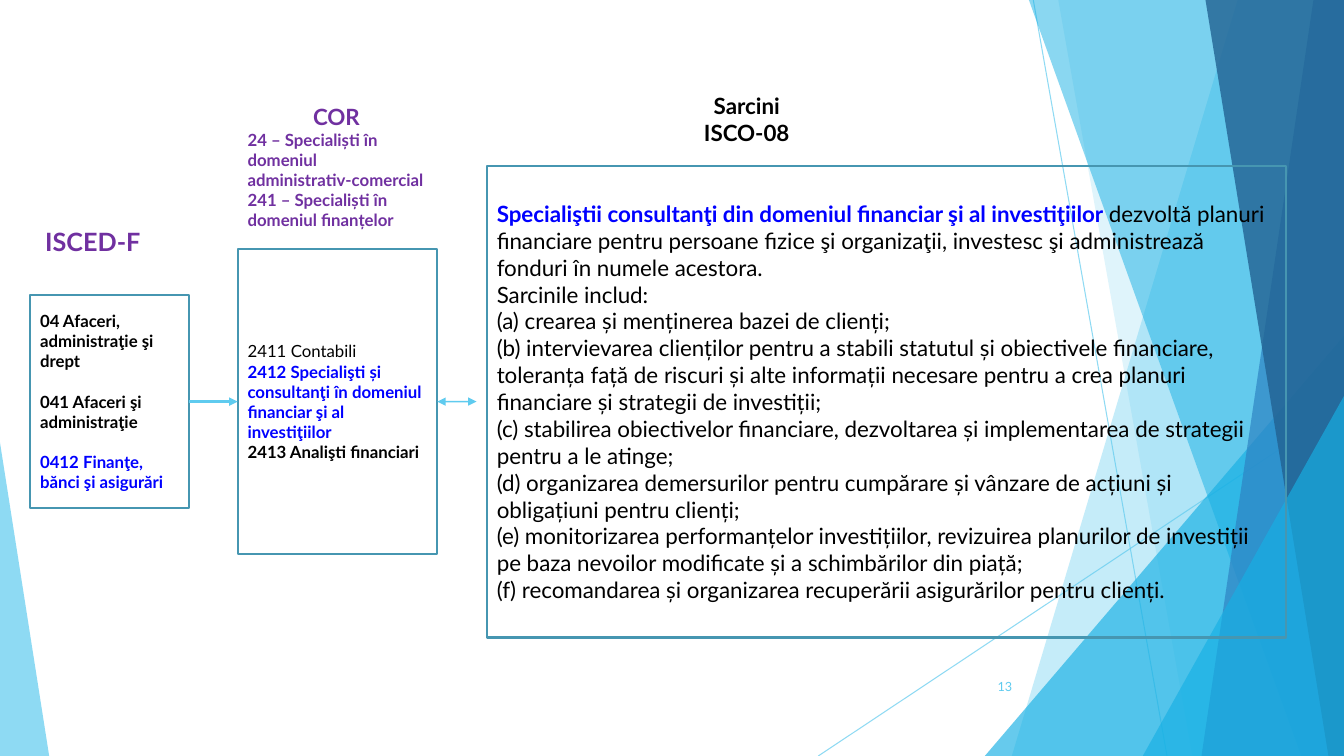
import pptx
import pptx.util
import pptx.dml.color
import pptx.enum.shapes
import pptx.enum.text
import pptx.oxml
import pptx.oxml.ns

Cm, Pt = pptx.util.Cm, pptx.util.Pt
RGB = pptx.dml.color.RGBColor
SHAPE = pptx.enum.shapes.MSO_SHAPE
ALIGN = pptx.enum.text.PP_ALIGN
MIDDLE = pptx.enum.text.MSO_ANCHOR.MIDDLE

SKY = RGB(0x5F, 0xCB, 0xEF)
CYAN = RGB(0x17, 0xB0, 0xE4)
AZURE = RGB(0x2E, 0x83, 0xC3)
NAVY = RGB(0x22, 0x62, 0x92)
TEAL = RGB(0x46, 0x96, 0xB1)
BLUE = RGB(0x00, 0x00, 0xFF)
PURPLE = RGB(0x70, 0x30, 0xA0)
BLACK = RGB(0x00, 0x00, 0x00)
WHITE = RGB(0xFF, 0xFF, 0xFF)

WIDE, HIGH = 33.87, 19.05
AXIS = 10.12


def add_tag(parent, name, **attrs):
    tag = pptx.oxml.parse_xml(f'<a:{name} {pptx.oxml.ns.nsdecls("a")}/>')
    for key, value in attrs.items():
        tag.set(key, str(value))
    parent.append(tag)


def fade(fill, percent):
    color = fill._xPr.find(".//" + pptx.oxml.ns.qn("a:srgbClr"))
    add_tag(color, "alpha", val=percent * 1000)


def tint(shape, color, percent):
    shape.shadow.inherit = False
    shape.fill.solid()
    shape.fill.fore_color.rgb = color
    fade(shape.fill, percent)
    shape.line.fill.background()


def add_line(slide, start, end, width, percent=100, heads=()):
    line = slide.shapes.add_connector(
        pptx.enum.shapes.MSO_CONNECTOR.STRAIGHT, *map(Cm, start + end))
    line.line.color.rgb = SKY
    line.line.width = Pt(width)
    if percent < 100:
        fade(line.line.fill, percent)
    for head in heads:
        add_tag(line.line._ln, head, type="triangle")
    add_tag(line._element.spPr, "effectLst")
    return line


def add_shard(slide, top, foot, color, percent):
    pen = slide.shapes.build_freeform(Cm(top), 0)
    pen.add_line_segments([(Cm(WIDE), 0), (Cm(WIDE), Cm(HIGH)), (Cm(foot), Cm(HIGH))])
    tint(pen.convert_to_shape(), color, percent)


def add_wedge(slide, left, top, width, peak, color, percent):
    wedge = slide.shapes.add_shape(
        SHAPE.ISOSCELES_TRIANGLE, Cm(left), Cm(top), Cm(width), Cm(HIGH - top))
    wedge.adjustments[0] = peak
    tint(wedge, color, percent)


def add_decor(slide):
    add_line(slide, (26.04, 0), (29.41, HIGH), 0.75, 70)
    add_line(slide, (WIDE, 10.24), (20.62, HIGH), 0.75, 70)
    add_shard(slide, 31.19, 25.5, SKY, 36)
    add_shard(slide, 26.67, 30.05, SKY, 20)
    add_wedge(slide, 24.82, 8.46, 9.05, 1, CYAN, 66)
    add_shard(slide, 25.93, 32.79, CYAN, 50)
    add_shard(slide, 33.1, 30.28, AZURE, 70)
    add_shard(slide, 30.38, 33.48, NAVY, 80)
    add_wedge(slide, 28.8, 9.98, 5.07, 1, CYAN, 66)
    add_wedge(slide, 0, 11.15, 1.24, 0, SKY, 70)


def write(shape, text, size=12, color=BLACK, bold=False, align=ALIGN.LEFT,
          gap=0, join=False):
    frame = shape.text_frame
    para = frame.paragraphs[-1]
    if para.runs and not join:
        para = frame.add_paragraph()
        para.space_before = Pt(gap)
    para.alignment = align
    run = para.add_run()
    run.text = text
    run.font.name = "Lato"
    run.font.size = Pt(size)
    run.font.bold = bold
    run.font.color.rgb = color


def add_label(slide, box):
    label = slide.shapes.add_textbox(*map(Cm, box))
    label.text_frame.word_wrap = True
    label.text_frame.vertical_anchor = MIDDLE
    return label


def add_panel(slide, box, fill=None):
    panel = slide.shapes.add_shape(SHAPE.RECTANGLE, *map(Cm, box))
    panel.shadow.inherit = False
    panel.text_frame.word_wrap = True
    panel.text_frame.vertical_anchor = MIDDLE
    if fill is None:
        panel.fill.background()
        panel.line.color.rgb = TEAL
        panel.line.width = Pt(1.5)
    else:
        panel.fill.solid()
        panel.fill.fore_color.rgb = fill
        panel.line.fill.background()
    return panel


def add_fields(slide, left, width, height):
    title = add_label(slide, (left - 0.07, 5.33, 3.3, 1.5))
    write(title, "ISCED-F", size=18, color=PURPLE, bold=True, align=ALIGN.CENTER)
    panel = add_panel(slide, (left, AXIS - height / 2, width, height))
    write(panel, "04 Afaceri, administraţie şi drept", bold=True)
    write(panel, "041 Afaceri şi administraţie", bold=True, gap=14.4)
    write(panel, "0412 Finanţe, bănci şi asigurări", color=BLUE, bold=True, gap=14.4)
    return panel


def add_jobs(slide, left, width, height):
    title = add_panel(slide, (left, 2.24, width - 0.05, 3.91), WHITE)
    write(title, "COR", size=16, color=PURPLE, bold=True, align=ALIGN.CENTER)
    for text in ("24 – Specialiști în domeniul administrativ-comercial",
                 "241 – Specialiști în domeniul finanțelor"):
        write(title, text, color=PURPLE, bold=True)
    panel = add_panel(slide, (left, AXIS - height / 2, width, height))
    write(panel, "2411 Contabili")
    write(panel, "2412 Specialişti și consultanţi în domeniul financiar şi al investiţiilor",
          color=BLUE, bold=True)
    write(panel, "2413 Analişti financiari", bold=True)
    return panel


def add_tasks(slide, left, width, height):
    title = add_label(slide, (left + 4.06, 2.24, 4.98, 1.5))
    for text in ("Sarcini", "ISCO-08"):
        write(title, text, size=16, bold=True, align=ALIGN.CENTER)
    panel = add_panel(slide, (left, AXIS - height / 2, width, height))
    write(panel, "Specialiştii consultanţi din domeniul financiar şi al investiţiilor ",
          size=16, color=BLUE, bold=True)
    write(panel, "dezvoltă planuri financiare pentru persoane fizice şi organizaţii, "
          "investesc şi administrează fonduri în numele acestora.", size=16, join=True)
    for text in (
        "Sarcinile includ:",
        "(a) crearea și menținerea bazei de clienți;",
        "(b) intervievarea clienților pentru a stabili statutul și obiectivele financiare, "
        "toleranța față de riscuri și alte informații necesare pentru a crea planuri "
        "financiare și strategii de investiții;",
        "(c) stabilirea obiectivelor financiare, dezvoltarea și implementarea de strategii "
        "pentru a le atinge;",
        "(d) organizarea demersurilor pentru cumpărare și vânzare de acțiuni și "
        "obligațiuni pentru clienți;",
        "(e) monitorizarea performanțelor investițiilor, revizuirea planurilor de investiții "
        "pe baza nevoilor modificate și a schimbărilor din piață;",
        "(f) recomandarea și organizarea recuperării asigurărilor pentru clienți.",
    ):
        write(panel, text, size=16)


def main():
    deck = pptx.Presentation()
    deck.slide_width, deck.slide_height = Cm(WIDE), Cm(HIGH)
    slide = deck.slides.add_slide(deck.slide_layouts[6])
    add_decor(slide)
    number = add_label(slide, (23.85, 16.79, 1.91, 1.02))
    write(number, "13", size=9, color=SKY, align=ALIGN.RIGHT)
    fields = add_fields(slide, 0.76, 4, 5.38)
    add_tasks(slide, 12.27, 20.14, 11.89)
    jobs = add_jobs(slide, 5.99, 5.03, 7.7)
    link = add_line(slide, (4.76, AXIS), (5.99, AXIS), 0, heads=["tailEnd"])
    link.begin_connect(fields, 3)
    link.end_connect(jobs, 1)
    link = add_line(slide, (11.02, AXIS), (12.01, AXIS), 1, heads=["headEnd", "tailEnd"])
    link.begin_connect(jobs, 3)
    deck.save("out.pptx")


if __name__ == "__main__":
    main()
